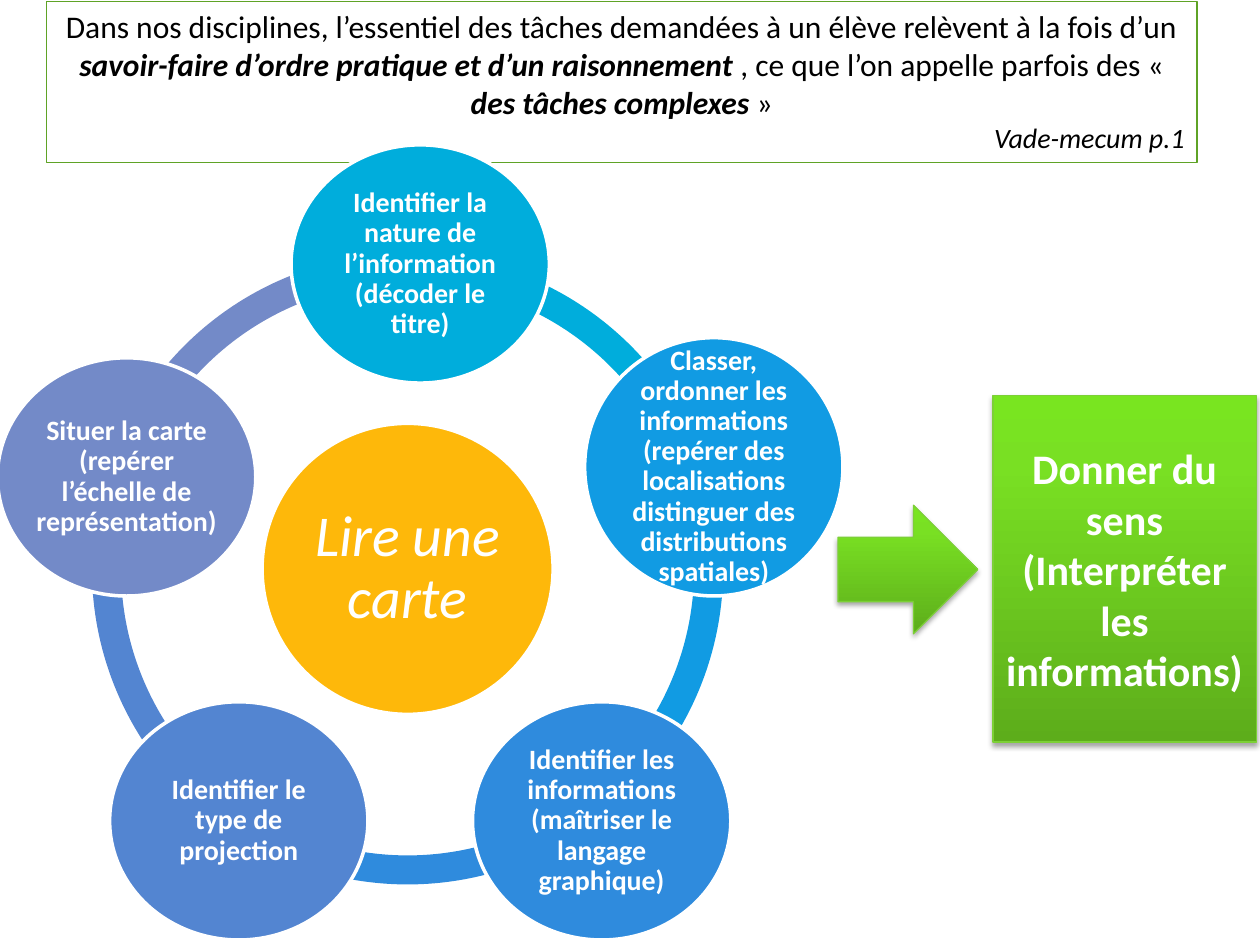
from lxml import etree
from pptx import Presentation
from pptx.dml.color import RGBColor
from pptx.enum import shapes, text
from pptx.oxml.ns import qn
from pptx.util import Inches, Pt

FONT = "Calibri"
WHITE = "FFFFFF"
GREEN_STOPS = [(0, "5DAD1B"), (80, "79E023"), (100, "79E520")]
STEPS = [
    ("Identifier la nature de l’information (décoder le titre)",
     "00ADDC", (2.31, 1.15, 2.05, 1.89)),
    ("Classer, ordonner les informations (repérer des localisations "
     "distinguer des distributions spatiales)",
     "119BE3", (4.64, 2.68, 2.05, 2.05)),
    ("Identifier les informations (maîtriser le langage graphique)",
     "2F8BDD", (3.75, 5.57, 2.05, 1.89)),
    ("Identifier le type de projection",
     "5385D1", (0.87, 5.57, 2.05, 1.89)),
    ("Situer la carte (repérer l’échelle de représentation)",
     "738AC8", (-0.02, 2.84, 2.05, 1.89)),
]


def color(value):
    return RGBColor.from_string(value)


def add_preset(slide, preset, box, fill=None, line=None, width=0.75):
    shape = slide.shapes.add_shape(preset, *(Inches(length) for length in box))
    shape.shadow.inherit = False
    if fill:
        shape.fill.solid()
        shape.fill.fore_color.rgb = color(fill)
    else:
        shape.fill.background()
    if line:
        shape.line.color.rgb = color(line)
        shape.line.width = Pt(width)
    else:
        shape.line.fill.background()
    return shape


def format_run(run, size, value, bold=False, italic=False):
    run.font.name = FONT
    run.font.size = Pt(size)
    run.font.color.rgb = color(value)
    run.font.bold = bold
    run.font.italic = italic


def add_statement(slide, box):
    shape = add_preset(slide, shapes.MSO_SHAPE.RECTANGLE, box, line="5FA326")
    frame = shape.text_frame
    frame.word_wrap = True
    frame.vertical_anchor = text.MSO_ANCHOR.TOP
    paragraph = frame.paragraphs[0]
    paragraph.alignment = text.PP_ALIGN.CENTER
    parts = [
        ("Dans nos disciplines, l’essentiel des tâches demandées à un élève "
         "relèvent à la fois d’un ", False),
        ("savoir-faire d’ordre pratique et d’un raisonnement ", True),
        (", ce que l’on appelle parfois des « ", False),
        ("des tâches complexes", True),
        (" »", False),
    ]
    for wording, strong in parts:
        run = paragraph.add_run()
        run.text = wording
        format_run(run, 18, "000000", strong, strong)
    source = frame.add_paragraph()
    source.text = "Vade-mecum p.1"
    source.alignment = text.PP_ALIGN.RIGHT
    format_run(source.runs[0], 16, "000000", italic=True)


def add_circle(slide, box, wording, fill, size, bold=False, italic=False, inset=0):
    shape = add_preset(slide, shapes.MSO_SHAPE.OVAL, box, fill, WHITE, 2)
    frame = shape.text_frame
    frame.word_wrap = True
    frame.vertical_anchor = text.MSO_ANCHOR.MIDDLE
    frame.margin_left = frame.margin_right = Inches(inset)
    frame.margin_top = frame.margin_bottom = Inches(inset)
    frame.text = wording
    paragraph = frame.paragraphs[0]
    paragraph.alignment = text.PP_ALIGN.CENTER
    paragraph.line_spacing = 0.9
    format_run(paragraph.runs[0], size, WHITE, bold, italic)


def add_cycle(slide, box):
    left, top, width, height = box
    sweep = 360 / len(STEPS)
    for index, (_, fill, _) in reversed(list(enumerate(STEPS))):
        arc = add_preset(slide, shapes.MSO_SHAPE.BLOCK_ARC, box, fill)
        start = 270 + sweep * index
        arc.adjustments[0] = start % 360 * 0.6
        arc.adjustments[1] = (start + sweep) % 360 * 0.6
        arc.adjustments[2] = 0.046
    hub = 2.31
    hub_box = (left + (width - hub) / 2, top + (height - hub) / 2, hub, hub)
    add_circle(slide, hub_box, "Lire une carte", "FEB80A", 33, italic=True, inset=0.04)
    for wording, fill, step_box in STEPS:
        add_circle(slide, step_box, wording, fill, 16, bold=True)


def add_glossy(slide, preset, box):
    shape = add_preset(slide, preset, box, line="7CD036")
    shape.fill.gradient()
    shape.fill.gradient_angle = 90
    properties = shape._element.spPr
    stops = properties.find(".//" + qn("a:gsLst"))
    for stop in list(stops):
        stops.remove(stop)
    for position, value in GREEN_STOPS:
        stop = etree.SubElement(stops, qn("a:gs"), pos=str(position * 1000))
        etree.SubElement(stop, qn("a:srgbClr"), val=value)
    shadow = etree.SubElement(
        properties.find(qn("a:effectLst")), qn("a:outerShdw"),
        blurRad=str(Pt(3.1)), dist=str(Pt(1.8)), dir="5400000", rotWithShape="0")
    tint = etree.SubElement(shadow, qn("a:srgbClr"), val="000000")
    etree.SubElement(tint, qn("a:alpha"), val="35000")
    return shape


def add_outcome(slide, box):
    shape = add_glossy(slide, shapes.MSO_SHAPE.RECTANGLE, box)
    frame = shape.text_frame
    frame.word_wrap = True
    frame.vertical_anchor = text.MSO_ANCHOR.MIDDLE
    frame.text = "Donner du sens\n(Interpréter les informations)"
    for paragraph in frame.paragraphs:
        paragraph.alignment = text.PP_ALIGN.CENTER
        format_run(paragraph.runs[0], 24, WHITE, bold=True)


def main():
    presentation = Presentation()
    presentation.slide_width = Inches(10)
    presentation.slide_height = Inches(7.5)
    slide = presentation.slides.add_slide(presentation.slide_layouts[6])
    add_statement(slide, (0.37, 0.01, 9.13, 1.28))
    add_cycle(slide, (0.73, 2.01, 5.01, 5.01))
    add_glossy(slide, shapes.MSO_SHAPE.RIGHT_ARROW, (6.65, 4.01, 1.11, 1.02))
    add_outcome(slide, (7.88, 3.14, 2.09, 2.75))
    presentation.save("out.pptx")


if __name__ == "__main__":
    main()
